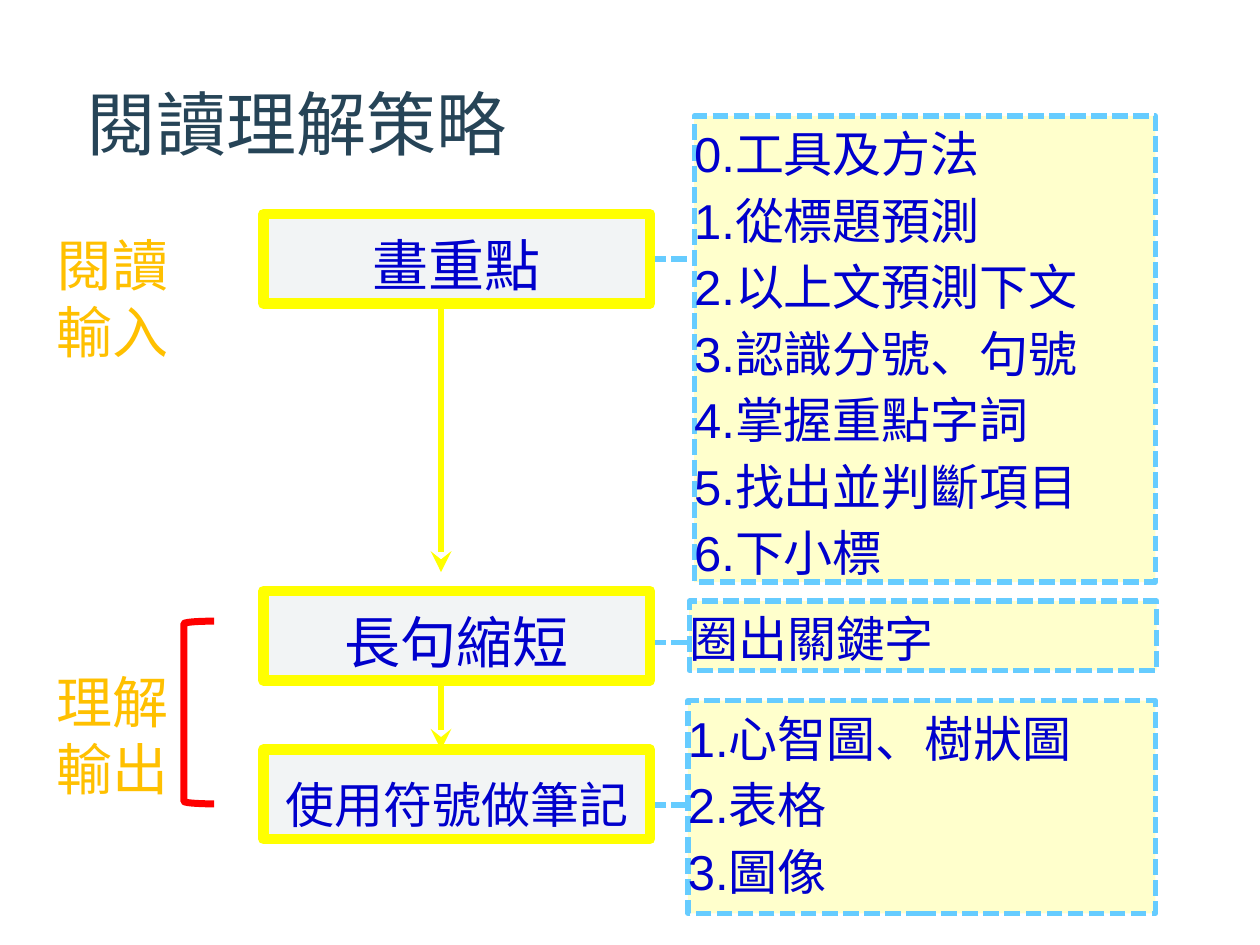
"""Build the reading strategies slide: three steps, each with its notes."""
from lxml.etree import SubElement
from pptx import Presentation
from pptx.dml.color import RGBColor
from pptx.enum.dml import MSO_LINE
from pptx.enum.shapes import MSO_CONNECTOR, MSO_SHAPE
from pptx.enum.text import MSO_ANCHOR, MSO_AUTO_SIZE, PP_ALIGN
from pptx.oxml.ns import qn
from pptx.util import Inches, Pt

TITLE = "閱讀理解策略"
STEPS = [
    {"name": "畫重點", "size": "step", "top": 1.7, "link": 2.07,
     "at": (5.51, 0.92, 3.66, 3.7),
     "notes": ["0.工具及方法", "1.從標題預測", "2.以上文預測下文",
               "3.認識分號、句號", "4.掌握重點字詞", "5.找出並判斷項目",
               "6.下小標"]},
    {"name": "長句縮短", "size": "step", "top": 4.69, "link": 5.1,
     "at": (5.47, 4.77, 3.71, 0.55), "notes": ["圈出關鍵字"]},
    {"name": "使用符號做筆記", "size": "note", "top": 5.95, "link": 6.39,
     "at": (5.46, 5.56, 3.71, 1.69),
     "notes": ["1.心智圖、樹狀圖", "2.表格", "3.圖像"]},
]
PHASES = [("閱讀輸入", 1.78), ("理解輸出", 5.25)]

THEME = {
    "ink": "0000CC", "title": "264457", "phase": "FFC000",
    "box": "F2F4F5", "edge": "FFFF00", "pad": "FFFFCC",
    "dash": "66CCFF", "mark": "FF0000",
    "sans": "Arial", "cjk": "Noto Sans CJK SC",
    "size": {"title": 40, "step": 32, "note": 28},
}
STEP_X, STEP_W, STEP_H = 2.09, 3.07, 0.71
STEP_R = STEP_X + STEP_W
LINK_R, FLOW_X = 6.89, 3.5
FLOW = [(STEPS[0]["top"] + STEP_H, 4.54),
        (STEPS[1]["top"] + STEP_H, STEPS[2]["top"])]


def color(key):
    return RGBColor.from_string(THEME[key])


def stroke(item, key, width):
    item.line.color.rgb = color(key)
    item.line.width = Pt(width)


def write(shape, lines, face, size, key, align, pitch=None):
    frame = shape.text_frame
    frame.word_wrap = True
    frame.vertical_anchor = MSO_ANCHOR.TOP
    frame.text = "\n".join(lines)
    for para in frame.paragraphs:
        para.alignment = align
        para.font.name = THEME[face]
        para.font.size = Pt(THEME["size"][size])
        para.font.color.rgb = color(key)
        if pitch:
            para.line_spacing = Pt(pitch)
    return frame


def panel(slide, at, fill, edge, width, kind=MSO_SHAPE.RECTANGLE):
    shape = slide.shapes.add_shape(kind, *map(Inches, at))
    shape.shadow.inherit = False
    if fill:
        shape.fill.solid()
        shape.fill.fore_color.rgb = color(fill)
    else:
        shape.fill.background()
    stroke(shape, edge, width)
    frame = shape.text_frame
    frame.margin_left = frame.margin_right = 0
    frame.margin_top = frame.margin_bottom = 0
    return shape


def label(slide, text, at, face, size, key):
    box = slide.shapes.add_textbox(*map(Inches, at))
    frame = write(box, [text], face, size, key, PP_ALIGN.LEFT)
    frame.auto_size = MSO_AUTO_SIZE.SHAPE_TO_FIT_TEXT


def join(slide, ends, key, width):
    line = slide.shapes.add_connector(
        MSO_CONNECTOR.STRAIGHT, *map(Inches, ends))
    stroke(line, key, width)
    SubElement(line._element.spPr, qn("a:effectLst"))
    return line


def add_step(slide, step):
    mid = step["top"] + STEP_H / 2
    met = abs(mid - step["link"]) < 0.03
    y = mid if met else step["link"]
    link = join(slide, (STEP_R, y, LINK_R, y), "dash", 3)
    link.line.dash_style = MSO_LINE.SQUARE_DOT
    pad = panel(slide, step["at"], "pad", "dash", 3)
    pad.line.dash_style = MSO_LINE.SQUARE_DOT
    write(pad, step["notes"], "sans", "note", "ink", PP_ALIGN.JUSTIFY, 38)
    box = panel(slide, (STEP_X, step["top"], STEP_W, STEP_H),
                "box", "edge", 6)
    write(box, [step["name"]], "cjk", step["size"], "ink",
          PP_ALIGN.CENTER, 48)
    if met:
        link.begin_connect(box, 3)


def main():
    deck = Presentation()
    deck.slide_width, deck.slide_height = Inches(10), Inches(7.5)
    slide = deck.slides.add_slide(deck.slide_layouts[6])
    for step in STEPS:
        add_step(slide, step)
    label(slide, TITLE, (0.59, 0.59, 5.98, 0.77), "cjk", "title", "title")
    for top, end in FLOW:
        flow = join(slide, (FLOW_X, top, FLOW_X, end), "edge", 4)
        SubElement(flow.line._get_or_add_ln(), qn("a:tailEnd"),
                   type="stealth")
    panel(slide, (1.46, 4.93, 0.24, 1.45), None, "mark", 4,
          MSO_SHAPE.LEFT_BRACKET)
    for text, top in PHASES:
        label(slide, text, (0.35, top, 1.18, 1.18), "sans", "step", "phase")
    deck.save("out.pptx")


if __name__ == "__main__":
    main()
